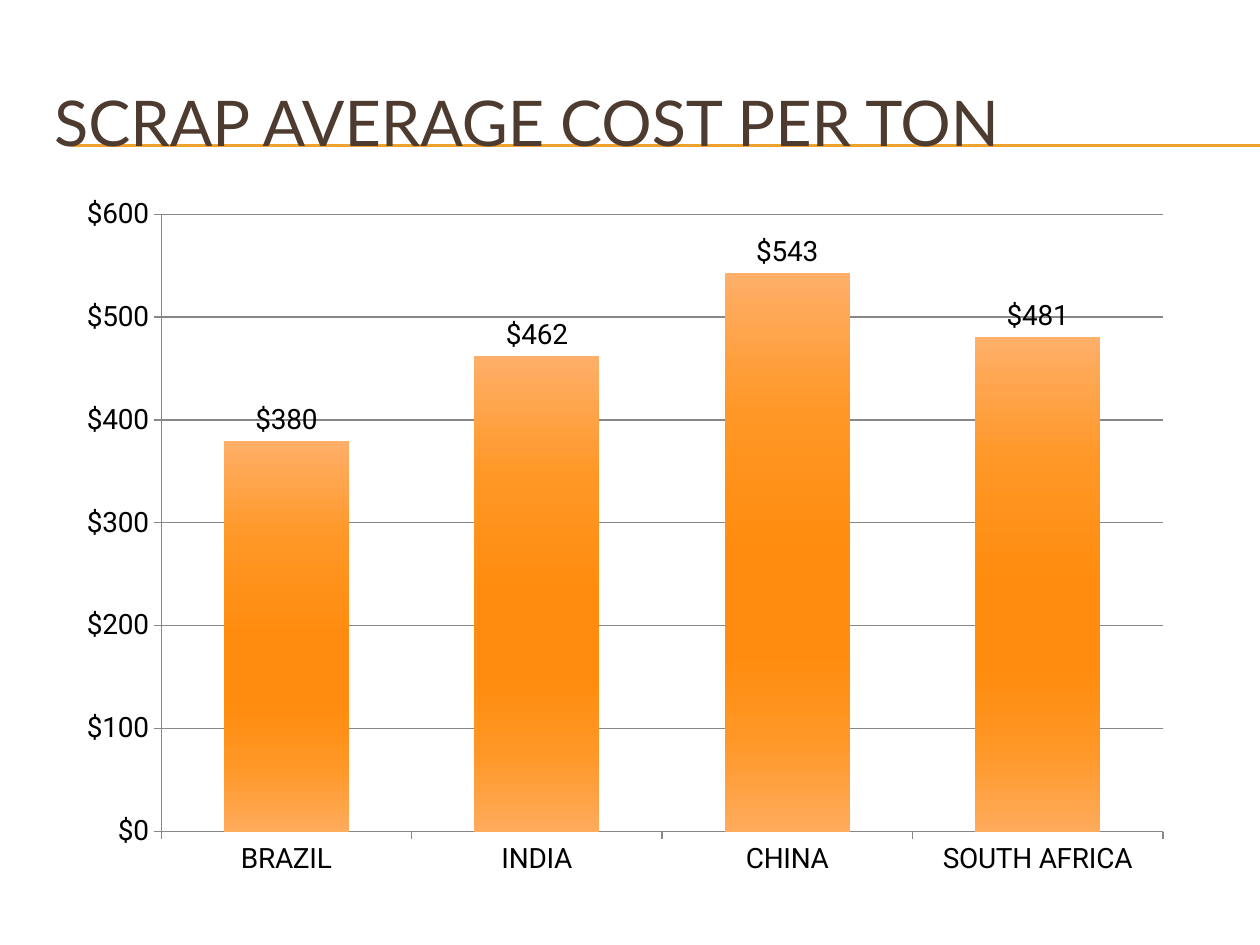
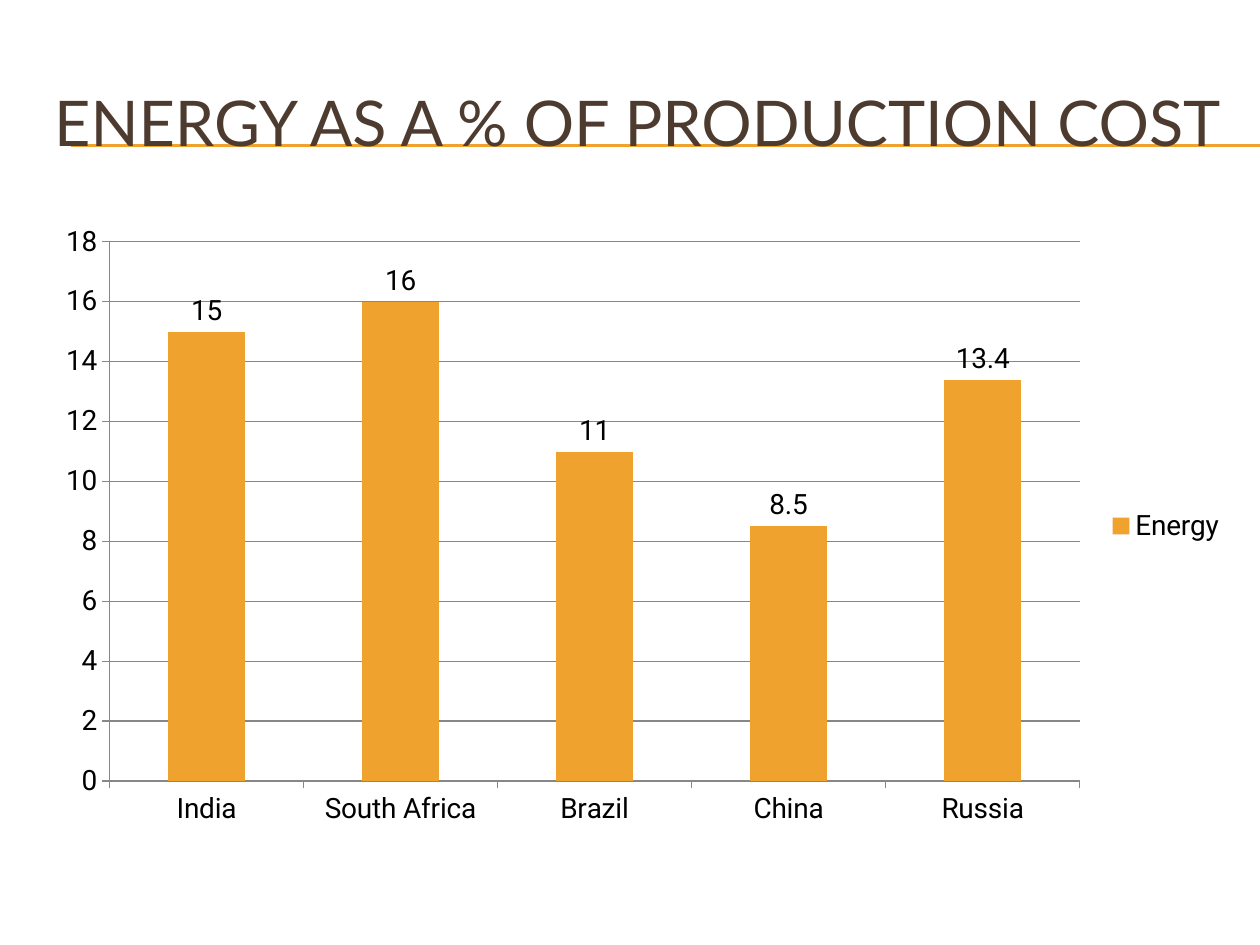
from lxml import etree
from pptx import Presentation
from pptx.chart.data import CategoryChartData
from pptx.dml.color import RGBColor
from pptx.enum.chart import XL_CHART_TYPE, XL_LABEL_POSITION, XL_LEGEND_POSITION, XL_TICK_MARK
from pptx.enum.shapes import MSO_CONNECTOR
from pptx.enum.text import MSO_ANCHOR, MSO_AUTO_SIZE, PP_ALIGN
from pptx.oxml import parse_xml
from pptx.oxml.ns import nsdecls, qn
from pptx.util import Inches, Pt

COLUMNS = XL_CHART_TYPE.COLUMN_CLUSTERED
ABOVE_BAR = XL_LABEL_POSITION.OUTSIDE_END
LEGEND_RIGHT = XL_LEGEND_POSITION.RIGHT
TICK_OUT = XL_TICK_MARK.OUTSIDE
STRAIGHT = MSO_CONNECTOR.STRAIGHT
MIDDLE = MSO_ANCHOR.MIDDLE
NO_AUTOFIT = MSO_AUTO_SIZE.NONE
LEFT = PP_ALIGN.LEFT

ORANGE, BROWN, GRAY, BLACK = "F0A22E", "4E3B30", "878787", "000000"
TITLE_FONT, CHART_FONT = "Lato", "Roboto"
TITLE_ONLY = 5

# Gradient stops from top to bottom: percent, colour
BAR_GRADIENT = [(0, "FFAF69"), (25, "FF9726"), (50, "FF8C0E"),
                (68, "FF8C0E"), (83, "FF9726"), (100, "FFAB5C")]

# Areas are left, top, width, height in inches; "plot" is the area inside the axes
SLIDES = [
    {"title": "SCRAP AVERAGE COST PER TON", "series": "Series 1",
     "costs": {"BRAZIL": 380, "INDIA": 462, "CHINA": 543, "SOUTH AFRICA": 481},
     "format": "[$$-409]#,##0", "top": 600, "step": 100, "gap": 100,
     "area": (0.51, 1.47, 8.9, 5.59), "plot": (1.28, 1.7, 7.95, 4.9),
     "gradient": True, "legend": False},
    {"title": "ENERGY AS A % OF PRODUCTION COST", "series": "Energy",
     "costs": {"India": 15, "South Africa": 16, "Brazil": 11, "China": 8.5, "Russia": 13.4},
     "format": "General", "top": 18, "step": 2, "gap": 150,
     "area": (0.33, 1.7, 9.5, 4.95), "plot": (0.87, 1.92, 7.7, 4.28),
     "gradient": False, "legend": True},
]


def color(hex_string):
    return RGBColor.from_string(hex_string)


def place_plot(chart, area, plot):
    """Fix the area inside the axes, as fractions of the chart area."""
    plot_area = chart._chartSpace.chart.plotArea
    for old_layout in plot_area.findall(qn("c:layout")):
        plot_area.remove(old_layout)
    fractions = {"x": (plot[0] - area[0]) / area[2], "y": (plot[1] - area[1]) / area[3],
                 "w": plot[2] / area[2], "h": plot[3] / area[3]}
    settings = [("layoutTarget", "inner"), ("xMode", "edge"), ("yMode", "edge")]
    settings += [(key, f"{value:.4f}") for key, value in fractions.items()]
    items = "".join(f'<c:{key} val="{value}"/>' for key, value in settings)
    plot_area.insert(0, parse_xml(
        f'<c:layout {nsdecls("c")}><c:manualLayout>{items}</c:manualLayout></c:layout>'))


deck = Presentation()
deck.slide_width, deck.slide_height = Inches(10), Inches(7.5)

for content in SLIDES:
    page = deck.slides.add_slide(deck.slide_layouts[TITLE_ONLY])

    # Double rule under the title
    for height in (1.15, 1.16):
        rule = page.shapes.add_connector(STRAIGHT, Inches(0.56), Inches(height),
                                         Inches(10), Inches(height))
        rule.line.color.rgb = color(ORANGE)
        rule.line.width = Pt(0.75)
        etree.SubElement(rule._element.spPr, qn("a:effectLst"))

    # Title, in front of the rule
    title = page.shapes.title
    page.shapes._spTree.append(title._element)
    title.left, title.top, title.width, title.height = map(Inches, (0.33, 0.5, 9.5, 0.92))
    frame = title.text_frame
    frame.auto_size = NO_AUTOFIT
    frame.vertical_anchor = MIDDLE
    para = frame.paragraphs[0]
    para.alignment = LEFT
    span = para.add_run()
    span.text = content["title"]
    span.font.name = TITLE_FONT
    span.font.size = Pt(36)
    span.font.color.rgb = color(BROWN)

    # Chart
    data = CategoryChartData(number_format=content["format"])
    data.categories = list(content["costs"])
    data.add_series(content["series"], list(content["costs"].values()))
    chart = page.shapes.add_chart(COLUMNS, *map(Inches, content["area"]), data).chart
    chart.font.name = CHART_FONT
    chart.font.size = Pt(16)
    chart.font.color.rgb = color(BLACK)
    chart.has_title = False
    chart.has_legend = content["legend"]
    if content["legend"]:
        chart.legend.position = LEGEND_RIGHT
        chart.legend.include_in_layout = False
    place_plot(chart, content["area"], content["plot"])

    # Axes and gridlines
    values = chart.value_axis
    values.minimum_scale, values.maximum_scale = 0, content["top"]
    values.major_unit = content["step"]
    values.has_major_gridlines = True
    values.tick_labels.number_format = content["format"]
    values.tick_labels.number_format_is_linked = False
    for axis in (values, chart.category_axis):
        axis.major_tick_mark = TICK_OUT
    for line in (values.format.line, chart.category_axis.format.line,
                 values.major_gridlines.format.line):
        line.color.rgb = color(GRAY)
        line.width = Pt(0.75)

    # Bars and their labels
    bars = chart.plots[0]
    bars.gap_width = content["gap"]
    bars.vary_by_categories = False
    series = bars.series[0]
    series.invert_if_negative = False
    fill = series.format.fill
    fill.solid()
    fill.fore_color.rgb = color(ORANGE)
    if content["gradient"]:
        stops = "".join(f'<a:gs pos="{percent * 1000}"><a:srgbClr val="{shade}"/></a:gs>'
                        for percent, shade in BAR_GRADIENT)
        solid = series._element.spPr.find(qn("a:solidFill"))
        series._element.spPr.replace(solid, parse_xml(
            f'<a:gradFill {nsdecls("a")}><a:gsLst>{stops}</a:gsLst>'
            '<a:lin ang="5400000" scaled="0"/></a:gradFill>'))
    labels = series.data_labels
    labels.show_value = True
    labels.position = ABOVE_BAR
    labels.number_format = content["format"]
    labels.number_format_is_linked = False

deck.save("out.pptx")
